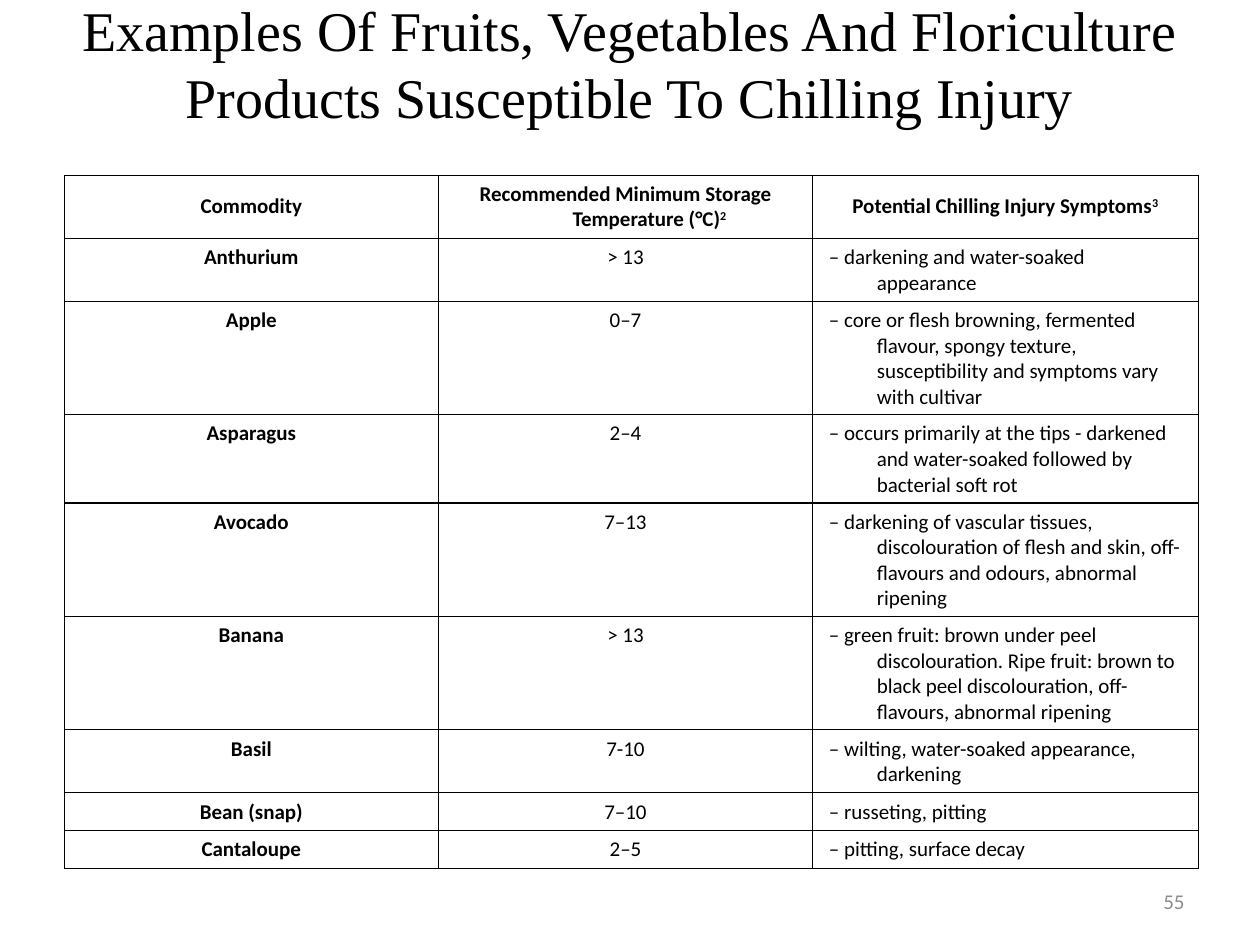
"""Build a slide with a table of produce that suffers chilling injury."""
from lxml import etree
from pptx import Presentation
from pptx.dml.color import RGBColor
from pptx.enum.text import MSO_ANCHOR, PP_ALIGN
from pptx.oxml.ns import qn
from pptx.util import Inches, Pt

BLACK = RGBColor(0, 0, 0)
GREY = RGBColor(0x8C, 0x8C, 0x8C)
LEFT, CENTER, RIGHT = PP_ALIGN.LEFT, PP_ALIGN.CENTER, PP_ALIGN.RIGHT
TOP, MIDDLE = MSO_ANCHOR.TOP, MSO_ANCHOR.MIDDLE

TITLE = ("Examples Of Fruits, Vegetables And Floriculture "
         "Products Susceptible To Chilling Injury\v")
WIDTHS = (2.97, 2.97, 3.06)
HEAD = (
    ("Commodity", ""),
    ("Recommended Minimum Storage Temperature (°C)", "2"),
    ("Potential Chilling Injury Symptoms", "3"),
)
HEAD_LINES = 2
ITEMS = (
    (2, "Anthurium", "> 13", "– darkening and water-soaked appearance"),
    (4, "Apple", "0–7", "– core or flesh browning, fermented flavour, "
     "spongy texture, susceptibility and symptoms vary with cultivar"),
    (3, "Asparagus", "2–4", "– occurs primarily at the tips - darkened "
     "and water-soaked followed by bacterial soft rot"),
    (4, "Avocado", "7–13", "– darkening of vascular tissues, discolouration "
     "of flesh and skin, off-flavours and odours, abnormal ripening"),
    (4, "Banana", "> 13", "– green fruit: brown under peel discolouration. "
     "Ripe fruit: brown to black peel discolouration, off-flavours, "
     "abnormal ripening"),
    (2, "Basil", "7-10", "– wilting, water-soaked appearance, darkening"),
    (1, "Bean (snap)", "7–10", "– russeting, pitting"),
    (1, "Cantaloupe", "2–5", "– pitting, surface decay"),
)


def style(para, size, name, color, align, bold=False):
    """Set the font and alignment of a paragraph."""
    para.alignment = align
    font = para.font
    font.size, font.name, font.bold = Pt(size), name, bold
    font.color.rgb = color


def place(shape, left, top, width, height):
    """Move and size a shape, in inches."""
    shape.left, shape.top = Inches(left), Inches(top)
    shape.width, shape.height = Inches(width), Inches(height)


def add_title(slide):
    """Fill the title placeholder."""
    title = slide.shapes.title
    place(title, 0.5, 0.3, 9, 0.93)
    frame = title.text_frame
    frame.text = TITLE
    frame.vertical_anchor = MIDDLE
    style(frame.paragraphs[0], 32, "Times New Roman", BLACK, CENTER)


def add_number(slide, text):
    """Add the page number at the lower right."""
    box = slide.shapes.add_textbox(
        Inches(7.17), Inches(6.95), Inches(2.33), Inches(0.4))
    frame = box.text_frame
    frame.word_wrap = True
    frame.vertical_anchor = MIDDLE
    frame.text = text
    style(frame.paragraphs[0], 12, "Calibri", GREY, RIGHT)


def add_edges(cell):
    """Draw thin black borders around a cell."""
    props = cell._tc.get_or_add_tcPr()
    for spot, side in enumerate(("lnL", "lnR", "lnT", "lnB")):
        line = etree.Element(qn(f"a:{side}"), w=str(Pt(0.75)))
        fill = etree.SubElement(line, qn("a:solidFill"))
        etree.SubElement(fill, qn("a:srgbClr"), val=str(BLACK))
        props.insert(spot, line)


def fill_cell(cell, text, align, anchor, bold, note=""):
    """Write and format a cell, with an optional raised note mark."""
    cell.fill.background()
    add_edges(cell)
    cell.margin_left = cell.margin_right = Inches(0.13)
    cell.margin_top = cell.margin_bottom = Inches(0.05)
    cell.vertical_anchor = anchor
    para = cell.text_frame.paragraphs[0]
    props = para._p.get_or_add_pPr()
    props.set("marL", str(Inches(0.38)))
    props.set("indent", str(Inches(-0.38)))
    para.add_run().text = text
    if note:
        mark = para.add_run()
        mark.text = note
        mark._r.get_or_add_rPr().set("baseline", "30000")
    style(para, 12, "Calibri", BLACK, align, bold)


def add_grid(slide):
    """Add the table, each row as high as its lines of text."""
    lines = [HEAD_LINES] + [item[0] for item in ITEMS]
    highs = [0.2 * count + 0.1 for count in lines]
    table = slide.shapes.add_table(
        len(lines), len(WIDTHS), Inches(0.51), Inches(1.39),
        Inches(sum(WIDTHS)), Inches(sum(highs))).table
    table.first_row = table.horz_banding = False
    for col, width in zip(table.columns, WIDTHS):
        col.width = Inches(width)
    for row, high in zip(table.rows, highs):
        row.height = Inches(high)
    for col, (text, note) in enumerate(HEAD):
        fill_cell(table.cell(0, col), text, CENTER, MIDDLE, True, note)
    for row, item in enumerate(ITEMS, 1):
        for col, text in enumerate(item[1:]):
            align = LEFT if col == 2 else CENTER
            fill_cell(table.cell(row, col), text, align, TOP, col == 0)


def main():
    """Build and save the slide."""
    deck = Presentation()
    deck.slide_width, deck.slide_height = Inches(10), Inches(7.5)
    slide = deck.slides.add_slide(deck.slide_layouts[5])
    add_number(slide, "55")
    add_grid(slide)
    add_title(slide)
    deck.save("out.pptx")


if __name__ == "__main__":
    main()
